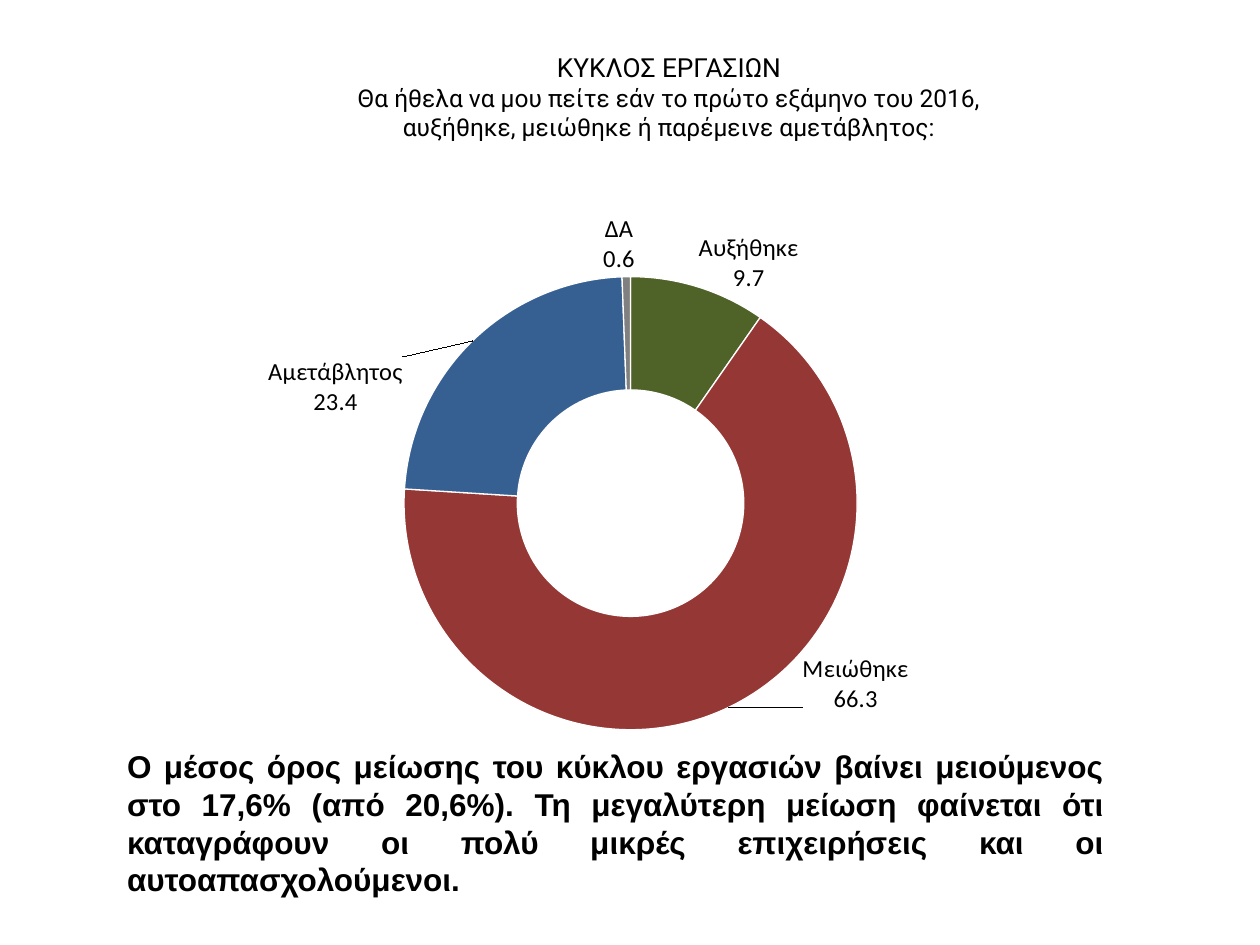
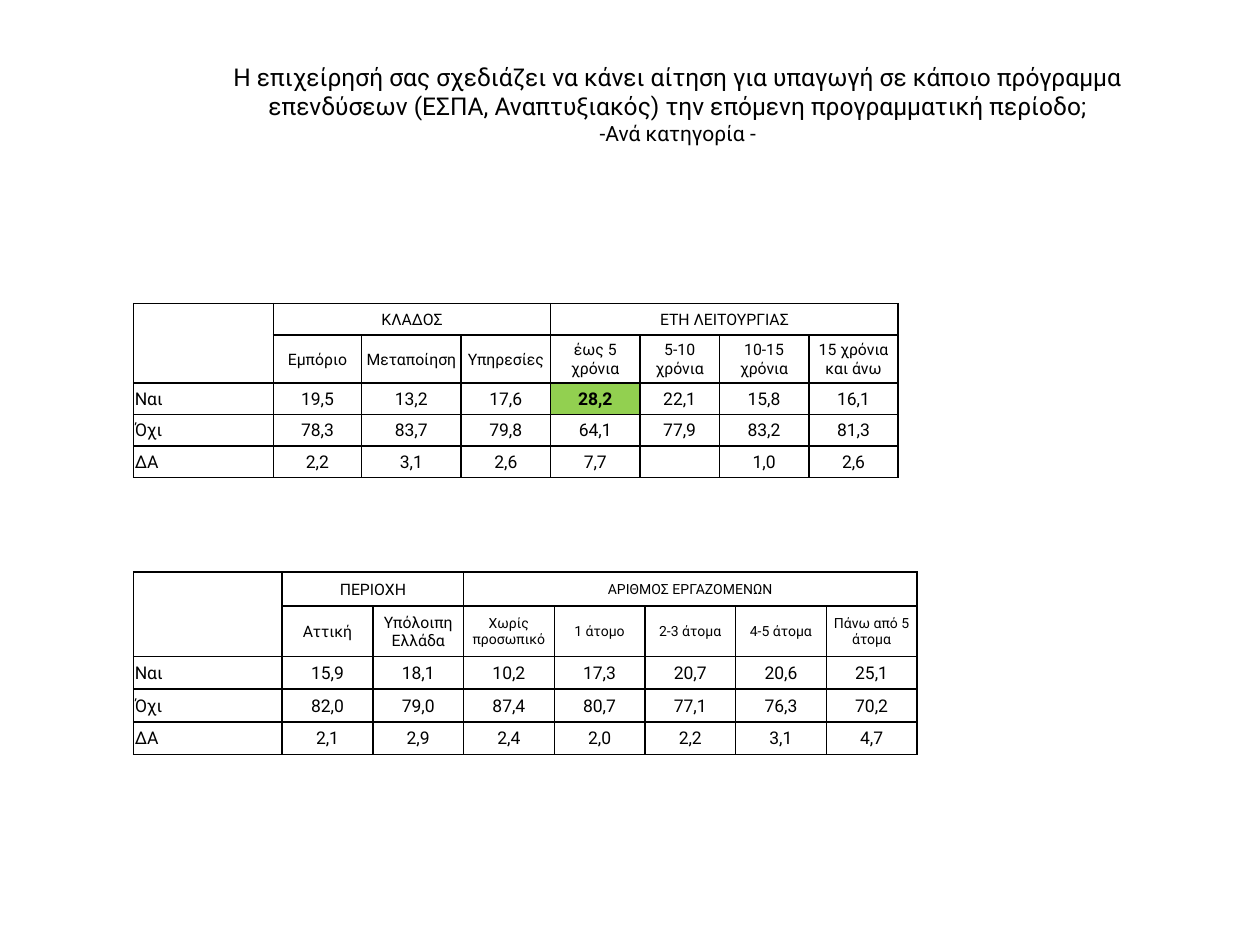
from dataclasses import dataclass

from pptx import Presentation
from pptx import util as u
from pptx.chart.data import CategoryChartData
from pptx.dml.color import RGBColor
from pptx.enum import chart as ch, text
from pptx.oxml import parse_xml
from pptx.oxml.ns import nsdecls


@dataclass(frozen=True)
class Theme:
    ink: str = "000000"
    paper: str = "FFFFFF"
    highlight: str = "92D050"
    answers: tuple = ("4F6228", "953735", "376092", "808080")
    heading_font: str = "Roboto"
    label_font: str = "Calibri"
    chart_font: str = "TeX Gyre Pagella"
    body_font: str = "Arial"
    topic_size: int = 15
    question_size: int = 14
    subtitle_size: int = 12
    body_size: int = 18
    label_size: int = 14
    value_size: int = 10
    header_size: int = 9
    compact_size: int = 8
    border_width: int = 1


THEME = Theme()


def rgb(code):
    return RGBColor.from_string(code)


def set_font(font, name, size, bold=False):
    font.name = name
    font.size = u.Pt(size)
    font.bold = bold
    font.color.rgb = rgb(THEME.ink)


def add_box(slide, left, top, width, height):
    box = slide.shapes.add_textbox(*map(u.Inches, (left, top, width, height)))
    frame = box.text_frame
    frame.word_wrap = True
    frame.vertical_anchor = text.MSO_ANCHOR.TOP
    return frame.paragraphs[0]


def add_title(slide, place, lines):
    title = add_box(slide, *place)
    title.alignment = text.PP_ALIGN.CENTER
    for number, (words, size) in enumerate(lines):
        if number:
            title.add_line_break()
        line = title.add_run()
        line.text = words
        set_font(line.font, THEME.heading_font, size)


def add_conclusion(slide, place, words):
    conclusion = add_box(slide, *place)
    conclusion.text = words
    conclusion.alignment = text.PP_ALIGN.JUSTIFY
    set_font(conclusion.font, THEME.body_font, THEME.body_size, bold=True)


def layout_xml(x, y, size=None):
    inner = '<c:layoutTarget val="inner"/>' if size else ""
    modes = '<c:xMode val="edge"/><c:yMode val="edge"/>' if size else ""
    extent = f'<c:w val="{size[0]}"/><c:h val="{size[1]}"/>' if size else ""
    return (f'<c:layout {nsdecls("c")}><c:manualLayout>{inner}{modes}'
            f'<c:x val="{x}"/><c:y val="{y}"/>{extent}</c:manualLayout></c:layout>')


def label_xml(index, offset):
    return parse_xml(
        f'<c:dLbl {nsdecls("c")}><c:idx val="{index}"/>{layout_xml(*offset)}'
        '<c:numFmt formatCode="###0.0" sourceLinked="0"/>'
        '<c:showLegendKey val="0"/><c:showVal val="1"/><c:showCatName val="1"/>'
        '<c:showSerName val="0"/><c:showPercent val="0"/><c:showBubbleSize val="0"/>'
        '<c:separator>\n</c:separator></c:dLbl>')


def add_doughnut(slide, place, answers, plot_place):
    data = CategoryChartData(number_format="###0.0")
    data.categories = [answer for answer, _, _ in answers]
    data.add_series("Series 1", [share for _, share, _ in answers])
    chart = slide.shapes.add_chart(
        ch.XL_CHART_TYPE.DOUGHNUT, *map(u.Inches, place), data).chart
    chart.has_legend = False
    chart.has_title = False
    set_font(chart.font, THEME.chart_font, THEME.body_size)

    plot_area = chart.plots[0]._element.getparent()
    for automatic in plot_area.findall("c:layout", plot_area.nsmap):
        plot_area.remove(automatic)
    x, y, *size = plot_place
    plot_area.insert(0, parse_xml(layout_xml(x, y, size)))

    shares = chart.plots[0].series[0]
    labels = shares.data_labels
    labels.show_value = True
    labels.show_category_name = True
    labels.number_format = "###0.0"
    labels.number_format_is_linked = False
    set_font(labels.font, THEME.label_font, THEME.label_size)
    for index, (_, _, offset) in enumerate(answers):
        slice_ = shares.points[index]
        slice_.format.fill.solid()
        slice_.format.fill.fore_color.rgb = rgb(THEME.answers[index])
        slice_.format.line.color.rgb = rgb(THEME.paper)
        slice_.format.line.width = u.Pt(0.75)
        labels._element.insert(index, label_xml(index, offset))
        set_font(slice_.data_label.font, THEME.label_font, THEME.label_size)


def add_borders(cell):
    properties = cell._tc.get_or_add_tcPr()
    for index, side in enumerate(("lnL", "lnR", "lnT", "lnB")):
        properties.insert(index, parse_xml(
            f'<a:{side} {nsdecls("a")} w="{u.Pt(THEME.border_width)}"><a:solidFill>'
            f'<a:srgbClr val="{THEME.ink}"/></a:solidFill></a:{side}>'))


def fill_cell(cell, words, size, centred, bold=False):
    cell.margin_left = cell.margin_right = cell.margin_top = u.Inches(0.01)
    cell.margin_bottom = 0
    cell.vertical_anchor = text.MSO_ANCHOR.MIDDLE
    if bold:
        cell.fill.solid()
        cell.fill.fore_color.rgb = rgb(THEME.highlight)
    else:
        cell.fill.background()
    add_borders(cell)
    entry = cell.text_frame.paragraphs[0]
    if words:
        entry.text = words
        entry.alignment = text.PP_ALIGN.CENTER if centred else text.PP_ALIGN.LEFT
        set_font(entry.font, THEME.heading_font, size, bold)
    else:
        entry._p.get_or_add_endParaRPr().set("sz", str(size * 100))


def add_breakdown(slide, left, top, widths, heights, groups, rows,
                  compact_from=None, highlight=None):
    columns = len(widths)
    table = slide.shapes.add_table(
        len(heights), columns, u.Inches(left), u.Inches(top),
        u.Inches(sum(widths)), u.Inches(sum(heights))).table
    table.first_row = table.horz_banding = False
    for column, width in zip(table.columns, widths):
        column.width = u.Inches(width)
    for row, height in zip(table.rows, heights):
        row.height = u.Inches(height)

    group_row = [""]
    for heading, span in groups:
        group_row += [heading] + [""] * (span - 1)
    for r, row in enumerate([group_row] + rows):
        for c, words in enumerate(row):
            size = THEME.value_size
            if r < 2:
                compact = compact_from is not None and c >= compact_from
                size = THEME.compact_size if compact else THEME.header_size
            fill_cell(table.cell(r, c), words, size, c > 0, (r, c) == highlight)

    table.cell(0, 0).merge(table.cell(1, 0))
    start = 1
    for _, span in groups:
        table.cell(0, start).merge(table.cell(0, start + span - 1))
        start += span


def build_turnover(slide):
    add_title(slide, (1.25, 0.36, 8.12, 0.46), [
        ("ΚΥΚΛΟΣ ΕΡΓΑΣΙΩΝ", THEME.topic_size),
        ("Θα ήθελα να μου πείτε εάν το πρώτο εξάμηνο του 2016,", THEME.question_size),
        ("αυξήθηκε, μειώθηκε ή παρέμεινε αμετάβλητος:", THEME.question_size),
    ])
    add_doughnut(slide, (1.67, 1.53, 6.67, 4.44), [
        ("Αυξήθηκε", 9.7, (0.08, -0.14)),
        ("Μειώθηκε", 66.3, (0.18, 0.05)),
        ("Αμετάβλητος", 23.4, (-0.21, 0.01)),
        ("ΔΑ", 0.6, (-0.01, -0.16)),
    ], (0.23, 0.15, 0.54, 0.81))
    add_conclusion(slide, (0.91, 5.88, 7.95, 1.31),
                   "Ο μέσος όρος μείωσης του κύκλου εργασιών βαίνει μειούμενος στο "
                   "17,6% (από 20,6%). Τη μεγαλύτερη μείωση φαίνεται ότι καταγράφουν "
                   "οι πολύ μικρές επιχειρήσεις και οι αυτοαπασχολούμενοι.")


def build_investment(slide):
    add_title(slide, (1.36, 0.44, 8.04, 0.24), [
        ("Η επιχείρησή σας σχεδιάζει να κάνει αίτηση για υπαγωγή σε κάποιο πρόγραμμα "
         "επενδύσεων (ΕΣΠΑ, Αναπτυξιακός) την επόμενη προγραμματική περίοδο;",
         THEME.question_size),
        ("-Ανά κατηγορία -", THEME.subtitle_size),
    ])
    add_breakdown(
        slide, 1.06, 2.41,
        [1.11, 0.7, 0.79, 0.71, 0.71, 0.63, 0.71, 0.71],
        [0.25, 0.38] + [0.25] * 3,
        [("ΚΛΑΔΟΣ", 3), ("ΕΤΗ ΛΕΙΤΟΥΡΓΙΑΣ", 4)],
        [["", "Εμπόριο", "Μεταποίηση", "Υπηρεσίες", "έως 5 χρόνια",
          "5-10 χρόνια", "10-15 χρόνια", "15 χρόνια και άνω"],
         ["Ναι", "19,5", "13,2", "17,6", "28,2", "22,1", "15,8", "16,1"],
         ["Όχι", "78,3", "83,7", "79,8", "64,1", "77,9", "83,2", "81,3"],
         ["ΔΑ", "2,2", "3,1", "2,6", "7,7", "", "1,0", "2,6"]],
        highlight=(2, 4))
    add_breakdown(
        slide, 1.06, 4.54,
        [1.18] + [0.72] * 7,
        [0.27, 0.4] + [0.26] * 3,
        [("ΠΕΡΙΟΧΗ", 2), ("ΑΡΙΘΜΟΣ ΕΡΓΑΖΟΜΕΝΩΝ", 5)],
        [["", "Αττική", "Υπόλοιπη Ελλάδα", "Χωρίς προσωπικό", "1 άτομο",
          "2-3 άτομα", "4-5 άτομα", "Πάνω από 5 άτομα"],
         ["Ναι", "15,9", "18,1", "10,2", "17,3", "20,7", "20,6", "25,1"],
         ["Όχι", "82,0", "79,0", "87,4", "80,7", "77,1", "76,3", "70,2"],
         ["ΔΑ", "2,1", "2,9", "2,4", "2,0", "2,2", "3,1", "4,7"]],
        compact_from=3)


def main():
    deck = Presentation()
    deck.slide_width = u.Inches(10)
    deck.slide_height = u.Inches(7.5)
    blank = deck.slide_layouts[6]
    for build in (build_turnover, build_investment):
        build(deck.slides.add_slide(blank))
    deck.save("out.pptx")


if __name__ == "__main__":
    main()
